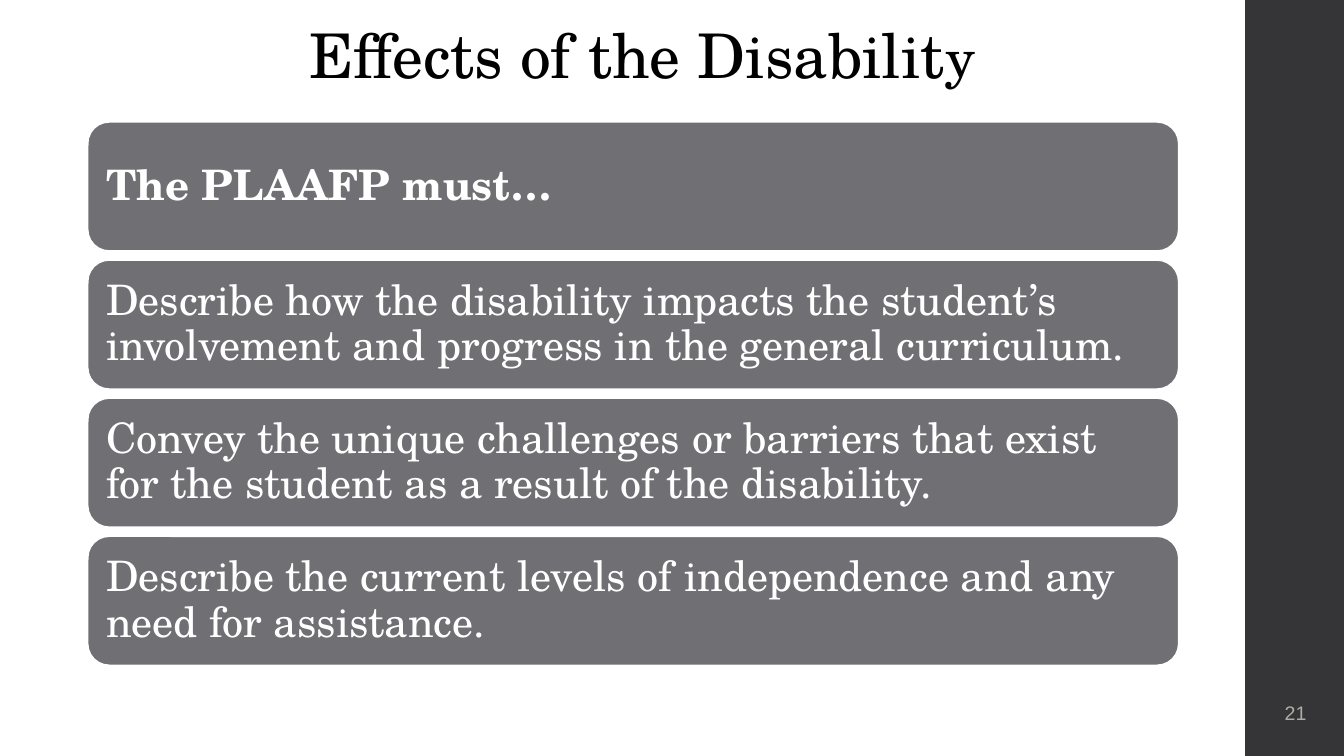
import pptx
import pptx.dml.color
import pptx.enum.shapes
import pptx.enum.text
import pptx.util

PX = 9144  # 100 px to the inch
COLORS = {
    "bar": "353537",
    "card": "6F6F74",
    "white": "FFFFFF",
    "black": "000000",
    "number": "ABAFA5",
}
SERIF = "TeX Gyre Schola"
SANS = "Arial"
ALIGN = pptx.enum.text.PP_ALIGN
SHAPES = pptx.enum.shapes.MSO_SHAPE

STATEMENTS = [
    "The PLAAFP must…",
    "Describe how the disability impacts the student’s involvement "
    "and progress in the general curriculum.",
    "Convey the unique challenges or barriers that exist for the student "
    "as a result of the disability.",
    "Describe the current levels of independence and any need for assistance.",
]
CARD_TOP, CARD_HEIGHT, CARD_PITCH = 121, 128, 137


def color(name):
    return pptx.dml.color.RGBColor.from_string(COLORS[name])


class SlideBuilder:
    def __init__(self, presentation):
        self.slide = presentation.slides.add_slide(presentation.slide_layouts[5])

    def box(self, left, top, width, height):
        return [length * PX for length in (left, top, width, height)]

    def style_run(self, run, size, font, color_name, bold=False):
        run.font.size = pptx.util.Pt(size)
        run.font.name = font
        run.font.bold = bold
        run.font.color.rgb = color(color_name)

    def prepare_frame(self, text_frame, inset):
        text_frame.word_wrap = True
        text_frame.vertical_anchor = pptx.enum.text.MSO_ANCHOR.MIDDLE
        text_frame.margin_left = text_frame.margin_right = inset * PX
        text_frame.margin_top = text_frame.margin_bottom = inset * PX

    def title(self, parts, left, top, width, height):
        """Fill the title from (text, size) parts."""
        title = self.slide.shapes.title
        title.left, title.top, title.width, title.height = self.box(left, top, width, height)
        self.prepare_frame(title.text_frame, 5)
        title.text_frame.auto_size = pptx.enum.text.MSO_AUTO_SIZE.SHAPE_TO_FIT_TEXT
        paragraph = title.text_frame.paragraphs[0]
        paragraph.alignment = ALIGN.CENTER
        for text, size in parts:
            run = paragraph.add_run()
            run.text = text
            self.style_run(run, size, SERIF, "black")

    def panel(self, kind, fill, left, top, width, height):
        shape = self.slide.shapes.add_shape(kind, *self.box(left, top, width, height))
        shape.shadow.inherit = False
        shape.fill.solid()
        shape.fill.fore_color.rgb = color(fill)
        shape.line.fill.background()
        return shape

    def card(self, text, top, bold):
        shape = self.panel(SHAPES.ROUNDED_RECTANGLE, "card", 87, top, 1082, CARD_HEIGHT)
        shape.line.color.rgb = color("white")
        shape.line.width = pptx.util.Pt(1.1)
        self.prepare_frame(shape.text_frame, 12)
        shape.text_frame.text = text
        paragraph = shape.text_frame.paragraphs[0]
        paragraph.alignment = ALIGN.LEFT
        paragraph.line_spacing = 0.9
        self.style_run(paragraph.runs[0], 30, SERIF, "white", bold)

    def slide_number(self, text, left, top, width, height):
        text_box = self.slide.shapes.add_textbox(*self.box(left, top, width, height))
        self.prepare_frame(text_box.text_frame, 5)
        text_box.text_frame.text = text
        paragraph = text_box.text_frame.paragraphs[0]
        paragraph.alignment = ALIGN.CENTER
        self.style_run(paragraph.runs[0], 14, SANS, "number")


def main():
    presentation = pptx.Presentation()
    presentation.slide_width = 1333 * PX
    presentation.slide_height = 750 * PX
    builder = SlideBuilder(presentation)
    builder.panel(SHAPES.RECTANGLE, "bar", 1235, 0, 98, 750)
    builder.slide_number("21", 1235, 675, 100, 65)
    for index, statement in enumerate(STATEMENTS):
        builder.card(statement, CARD_TOP + index * CARD_PITCH, bold=index == 0)
    builder.title([("Effects of the Disabilit", 44), ("y", 40)], 146, 11, 982, 84)
    presentation.save("out.pptx")


if __name__ == "__main__":
    main()
